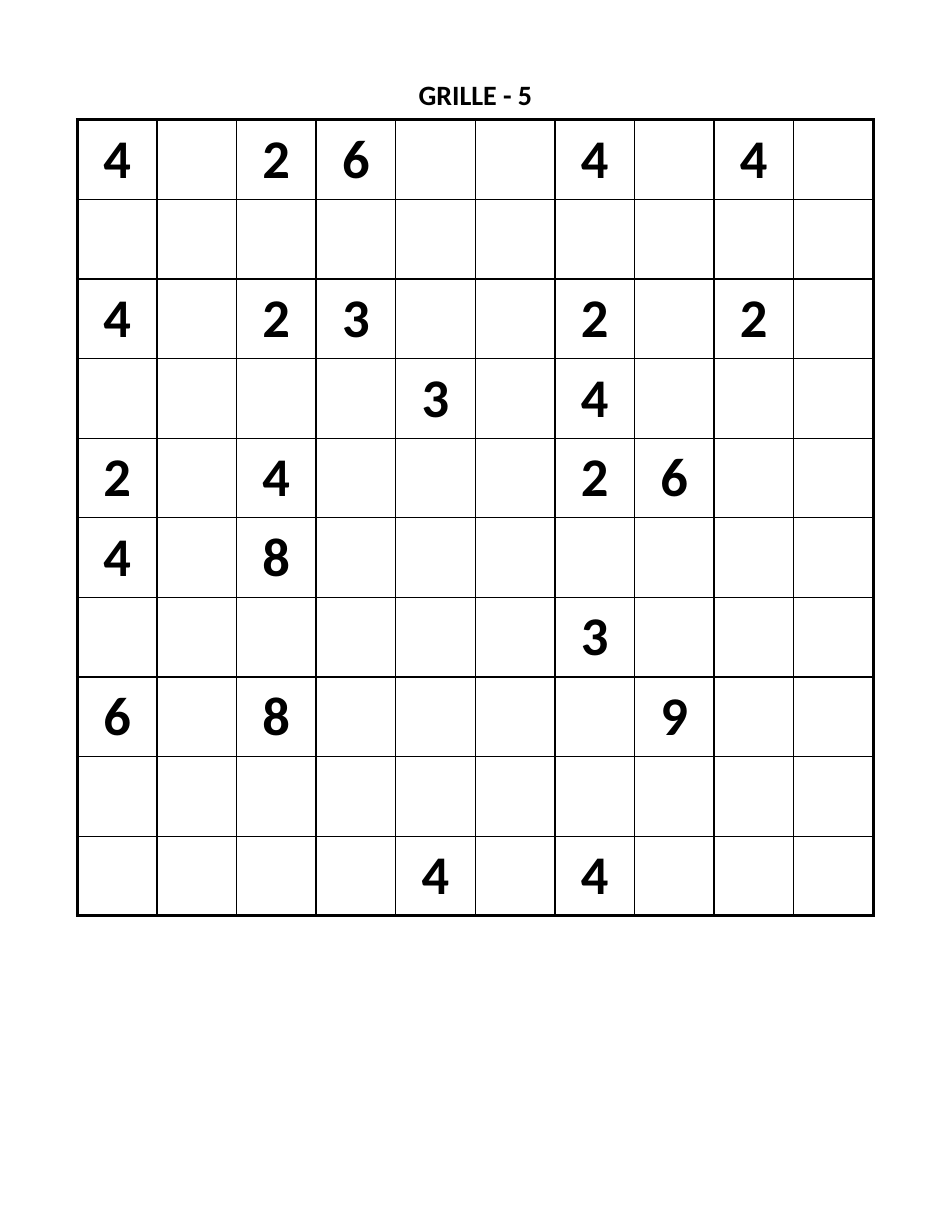
from typing import NamedTuple

from lxml import etree
from pptx import Presentation
from pptx.dml.color import RGBColor
from pptx.enum.text import MSO_ANCHOR, MSO_AUTO_SIZE, PP_ALIGN
from pptx.oxml.ns import qn
from pptx.util import Inches, Pt

CENTER = PP_ALIGN.CENTER
TOP = MSO_ANCHOR.TOP
MIDDLE = MSO_ANCHOR.MIDDLE
FIT_SHAPE = MSO_AUTO_SIZE.SHAPE_TO_FIT_TEXT

TITLE_ONLY = 5
FONT = "Calibri"
BLACK = "000000"
WHITE = "FFFFFF"
LEFT = 0.69
GRID_TOP = 1.07
GRID_SIZE = 7.11
THIN = 1
THICK = 2

CLUES = (
    "4.26..4.4.",
    "..........",
    "4.23..2.2.",
    "....3.4...",
    "2.4...26..",
    "4.8.......",
    "......3...",
    "6.8....9..",
    "..........",
    "....4.4...",
)


class Border(NamedTuple):
    tag: str
    outer: bool


def color(value: str) -> RGBColor:
    return RGBColor.from_string(value)


def write(frame, text: str, *, size: float, bold: bool = True, fill: str = BLACK) -> None:
    para = frame.paragraphs[0]
    para.alignment = CENTER
    span = para.add_run()
    span.text = text
    span.font.name = FONT
    span.font.size = Pt(size)
    span.font.bold = bold
    span.font.color.rgb = color(fill)


def clear_margins(target) -> None:
    target.margin_left = target.margin_right = 0
    target.margin_top = target.margin_bottom = 0


def draw_border(cell, border: Border) -> None:
    width = Pt(THICK if border.outer else THIN)
    properties = cell._tc.get_or_add_tcPr()
    line = etree.SubElement(properties, qn(border.tag), w=str(width))
    fill = etree.SubElement(line, qn("a:solidFill"))
    etree.SubElement(fill, qn("a:srgbClr"), val=BLACK)


def draw_cell(cell, clue: str, borders: list[Border]) -> None:
    clear_margins(cell)
    cell.vertical_anchor = MIDDLE
    for border in borders:
        draw_border(cell, border)
    cell.fill.solid()
    cell.fill.fore_color.rgb = color(WHITE)
    if clue != ".":
        write(cell.text_frame, clue, size=35)


def draw_title(page, text: str) -> None:
    box = page.shapes.title
    box.left, box.top = Inches(LEFT), Inches(0.69)
    box.width, box.height = Inches(GRID_SIZE), Inches(0.3)
    frame = box.text_frame
    frame.word_wrap = True
    frame.auto_size = FIT_SHAPE
    frame.vertical_anchor = TOP
    clear_margins(frame)
    write(frame, text, size=18)


def draw_grid(page, clues: tuple[str, ...]) -> None:
    count = len(clues)
    last = count - 1
    side = Inches(GRID_SIZE)
    grid = page.shapes.add_table(
        count, count, Inches(LEFT), Inches(GRID_TOP), side, side
    ).table
    grid.first_row = grid.horz_banding = False
    for track in (*grid.columns,):
        track.width = side // count
    for track in (*grid.rows,):
        track.height = side // count
    for row, line in enumerate(clues):
        for column, clue in enumerate(line):
            borders = [
                Border("a:lnL", column == 0),
                Border("a:lnR", column == last),
                Border("a:lnT", row == 0),
                Border("a:lnB", row == last),
            ]
            draw_cell(grid.cell(row, column), clue, borders)


def main() -> None:
    deck = Presentation()
    deck.slide_width, deck.slide_height = Inches(8.5), Inches(11)
    page = deck.slides.add_slide(deck.slide_layouts[TITLE_ONLY])
    draw_title(page, "GRILLE - 5")
    draw_grid(page, CLUES)
    deck.save("out.pptx")


if __name__ == "__main__":
    main()
